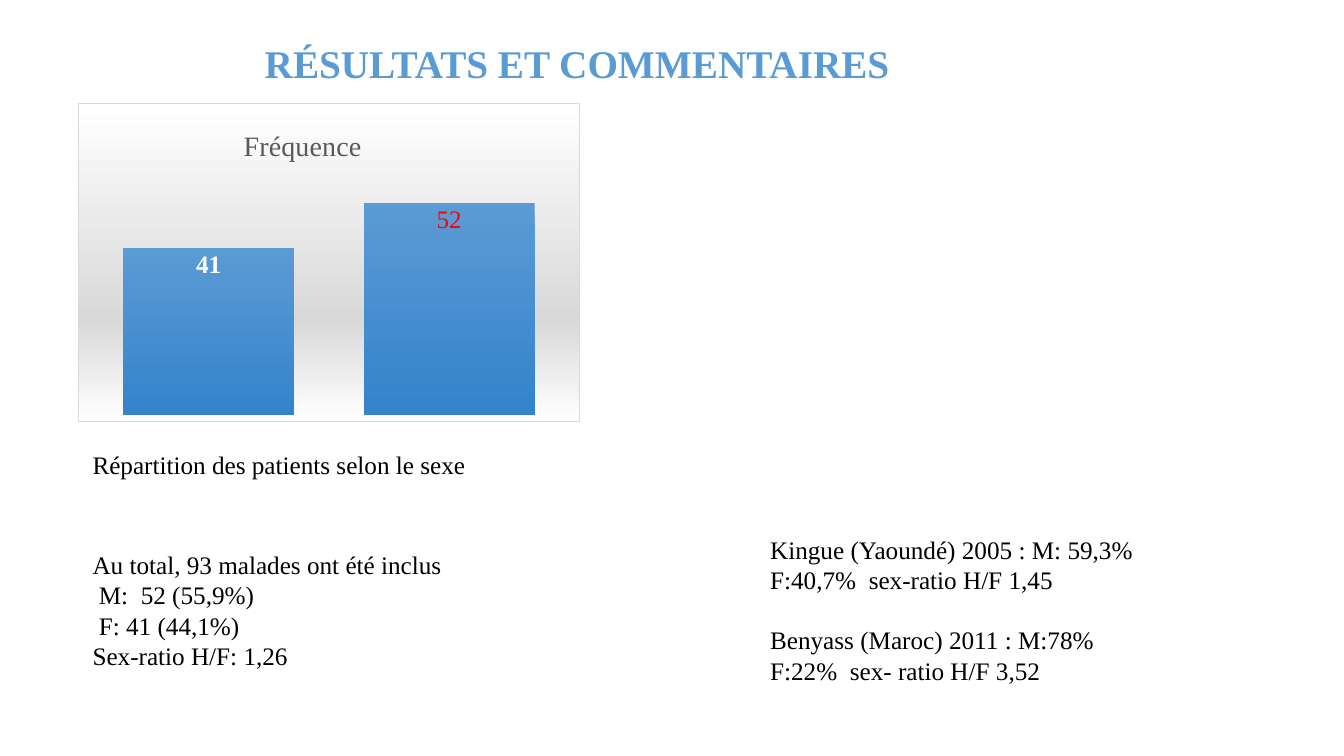
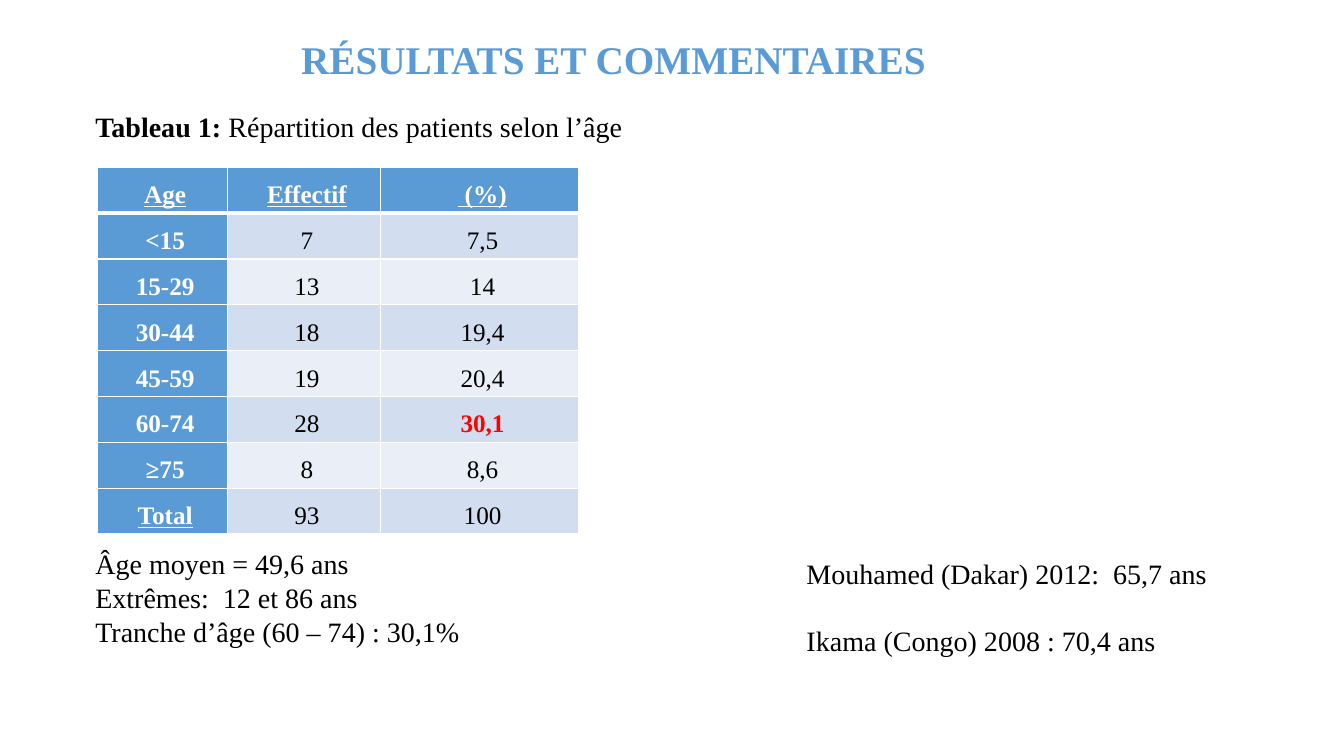
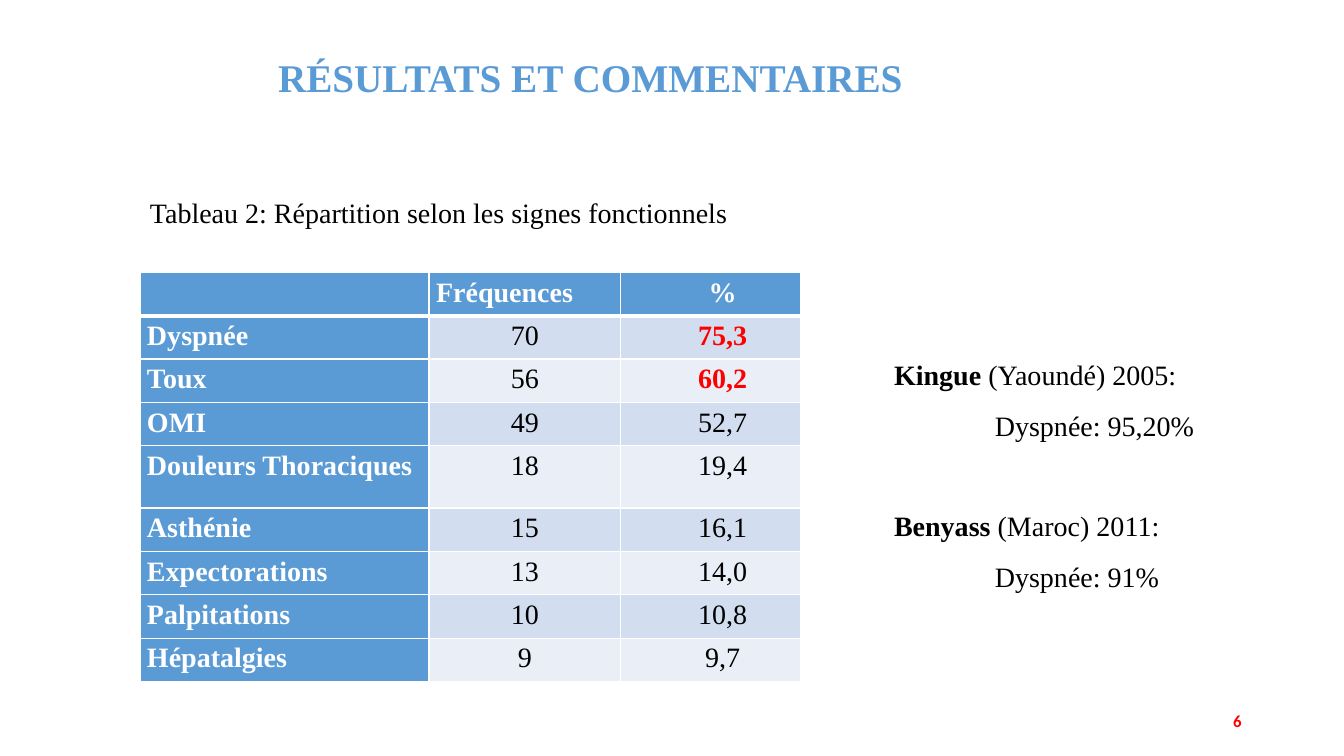
"""Build three result slides: a sex chart, an age table and a symptom table."""
from pptx import Presentation
from pptx.chart.data import CategoryChartData
from pptx.dml.color import RGBColor
from pptx.enum.chart import XL_CHART_TYPE, XL_LABEL_POSITION
from pptx.enum.text import MSO_ANCHOR, PP_ALIGN
from pptx.oxml import parse_xml
from pptx.util import Pt

COLUMN = XL_CHART_TYPE.COLUMN_CLUSTERED
IN_END = XL_LABEL_POSITION.INSIDE_END
MIDDLE = MSO_ANCHOR.MIDDLE
ALIGN = {"L": PP_ALIGN.LEFT, "C": PP_ALIGN.CENTER, "R": PP_ALIGN.RIGHT}
SERIF, SANS = "Times New Roman", "Calibri"
BLUE, DEEP, PALE, LIGHT = "5B9BD5", "3483CB", "D2DEEF", "EAEFF7"
WHITE, BLACK, RED, GREY, EDGE = "FFFFFF", "000000", "FF0000", "595959", "D9D9D9"
NS_A = 'xmlns:a="http://schemas.openxmlformats.org/drawingml/2006/main"'
NS_C = 'xmlns:c="http://schemas.openxmlformats.org/drawingml/2006/chart"'

TITLE = "RÉSULTATS ET COMMENTAIRES"
TITLES = [(182, 24.5), (208, 22), (191.5, 34.5)]

BOXES = [
    [
        ((59, 317.5, 300, 29), 18, ["Répartition des patients selon le sexe"], {}),
        ((59, 389, 300, 117), 18, [
            "Au total, 93 malades ont été inclus",
            {"runs": [("M:  52 (55,9%)", False)], "indent": 4.5},
            {"runs": [("F: 41 (44,1%)", False)], "indent": 4.5},
            "Sex-ratio H/F: 1,26"], {}),
        ((543, 378, 290, 138), 18, [
            "Kingue (Yaoundé) 2005 : M: 59,3% F:40,7%  sex-ratio H/F 1,45",
            {"runs": [("Benyass (Maroc) 2011 : M:78% F:22%  sex- ratio H/F 3,52", False)],
             "before": 21.5}], {}),
    ],
    [
        ((61, 75, 400, 31.5), 20, [
            {"runs": [("Tableau 1: ", True),
                      ("Répartition des patients selon l’âge", False)]}], {}),
        ((61, 387, 290, 104), 20, [
            "Âge moyen = 49,6 ans",
            "Extrêmes:  12 et 86 ans",
            "Tranche d’âge (60 – 74) : 30,1%"], {}),
        ((569, 394, 310, 80), 20, [
            "Mouhamed (Dakar) 2012:  65,7 ans",
            {"runs": [("Ikama (Congo) 2008 : 70,4 ans", False)], "before": 24}], {}),
    ],
    [
        ((100, 136, 428, 31.5), 20,
         ["Tableau 2: Répartition selon les signes fonctionnels"], {}),
        ((631.5, 240, 259, 189), 20, [
            {"runs": [("Kingue", True), (" (Yaoundé) 2005:", False)]},
            {"runs": [("Dyspnée: 95,20%", False)], "indent": 72},
            {"runs": [("Benyass", True), (" (Maroc) 2011:", False)], "before": 36},
            {"runs": [("Dyspnée: 91%", False)], "indent": 72}], {"line": 1.5}),
        ((678, 500.5, 216, 29), 12, ["6"],
         {"font": SANS, "color": RED, "bold": True, "align": "R", "anchor": MIDDLE}),
    ],
]

SEXES = {"name": "Fréquence", "values": [41, 52], "at": (55.5, 73.5, 359, 228)}

AGES = {
    "rows": [("Age", "Effectif", " (%)"), ("<15", "7", "7,5"), ("15-29", "13", "14"),
             ("30-44", "18", "19,4"), ("45-59", "19", "20,4"), ("60-74", "28", "30,1"),
             ("≥75", "8", "8,6"), ("Total", "93", "100")],
    "at": (69.5, 119.5), "cols": [93, 109.5, 141.5], "high": [32.75] * 8,
    "head": "CCC", "body": "CCC", "left": [4, 4, 4], "right": 0,
    "size": 18, "line": 1.5, "red": {"30,1"}, "under": {"Age", "Effectif", " (%)", "Total"},
}
SIGNS = {
    "rows": [("", "Fréquences", "%"), ("Dyspnée", "70", "75,3"), ("Toux", "56", "60,2"),
             ("OMI", "49", "52,7"), ("Douleurs Thoraciques", "18", "19,4"),
             ("Asthénie", "15", "16,1"), ("Expectorations", "13", "14,0"),
             ("Palpitations", "10", "10,8"), ("Hépatalgies", "9", "9,7")],
    "at": (100, 194.5), "cols": [206.5, 137, 128.5],
    "high": [31] * 4 + [44.5] + [31] * 4,
    "head": "LLC", "body": "LCC", "left": [5, 5, 22], "right": 5,
    "size": 20, "line": 1.15, "red": {"75,3", "60,2"}, "under": set(),
}


def rgb(code):
    return RGBColor.from_string(code)


def style(font, size, color=BLACK, bold=False, name=SERIF):
    font.name, font.size, font.bold = name, Pt(size), bold
    font.color.rgb = rgb(color)


def put(frame, paras, size, color=BLACK, bold=False, under=False,
        align="L", line=None, font=SERIF):
    for i, item in enumerate(paras):
        para = frame.add_paragraph() if i else frame.paragraphs[0]
        if isinstance(item, str):
            item = {"runs": [(item, bold)]}
        para.alignment = ALIGN[align]
        if line:
            para.line_spacing = line
        if "before" in item:
            para.space_before = Pt(item["before"])
        if "indent" in item:
            para._p.get_or_add_pPr().set("marL", str(Pt(item["indent"])))
        for words, heavy in item["runs"]:
            run = para.add_run()
            run.text = words
            style(run.font, size, color, heavy, font)
            if under:
                run.font.underline = True


def box(slide, at, paras, size, anchor=None, **form):
    frame = slide.shapes.add_textbox(*map(Pt, at)).text_frame
    frame.word_wrap = True
    if anchor is not None:
        frame.vertical_anchor = anchor
    put(frame, paras, size, **form)


def border(cell, head):
    props = cell._tc.get_or_add_tcPr()
    for side in "LRTB":
        wide = Pt(3 if head and side == "B" else 1)
        props.append(parse_xml(
            f'<a:ln{side} {NS_A} w="{wide}"><a:solidFill><a:srgbClr val="{WHITE}"/>'
            f'</a:solidFill></a:ln{side}>'))


def grid(slide, data):
    rows, cols, high = data["rows"], data["cols"], data["high"]
    spot = (*data["at"], sum(cols), sum(high))
    table = slide.shapes.add_table(len(rows), len(cols), *map(Pt, spot)).table
    for i, wide in enumerate(cols):
        table.columns[i].width = Pt(wide)
    for r, row in enumerate(rows):
        table.rows[r].height = Pt(high[r])
        for c, words in enumerate(row):
            cell = table.cell(r, c)
            label, hot = r == 0 or c == 0, words in data["red"]
            cell.margin_left, cell.margin_right = Pt(data["left"][c]), Pt(data["right"])
            cell.margin_top = cell.margin_bottom = 0
            border(cell, r == 0)
            cell.fill.solid()
            cell.fill.fore_color.rgb = rgb(BLUE if label else PALE if r % 2 else LIGHT)
            put(cell.text_frame, [words], data["size"],
                color=WHITE if label else RED if hot else BLACK,
                bold=label or hot, under=words in data["under"],
                align=data["body" if r else "head"][c], line=data["line"])


def fade(*stops):
    marks = "".join(f'<a:gs pos="{pos * 1000}"><a:srgbClr val="{code}"/></a:gs>'
                    for pos, code in stops)
    return (f'<a:gradFill {NS_A} rotWithShape="1"><a:gsLst>{marks}</a:gsLst>'
            f'<a:lin ang="5400000" scaled="0"/></a:gradFill>')


def layout(x, y, w=None, h=None):
    inner = '<c:layoutTarget val="inner"/>' if w else ""
    sizes = f'<c:w val="{w}"/><c:h val="{h}"/>' if w else ""
    return parse_xml(
        f'<c:layout {NS_C}><c:manualLayout>{inner}<c:xMode val="edge"/>'
        f'<c:yMode val="edge"/><c:x val="{x}"/><c:y val="{y}"/>{sizes}'
        f'</c:manualLayout></c:layout>')


def place(node, new):
    for old in node.findall(new.tag):
        node.remove(old)
    text = node.find(new.tag.replace("layout", "tx"))
    if text is None:
        node.insert(0, new)
    else:
        text.addnext(new)


def bars(slide, data):
    feed = CategoryChartData()
    feed.categories = ["1", "2"]
    feed.add_series("Series 1", data["values"])
    chart = slide.shapes.add_chart(COLUMN, *map(Pt, data["at"]), feed).chart
    style(chart.font, 10, name=SANS)
    chart.has_legend = False
    chart.has_title = True
    put(chart.chart_title.text_frame, [data["name"]], 20, color=GREY)
    chart.chart_title.include_in_layout = False
    place(chart.chart_title._element, layout(0.32, 0.06))
    axis = chart.value_axis
    axis.minimum_scale, axis.maximum_scale = 0, 60
    axis.has_major_gridlines = False
    axis.visible = chart.category_axis.visible = False

    plot = chart.plots[0]
    plot.gap_width, plot.vary_by_categories = 41, False
    series = plot.series[0]
    series._element.get_or_add_spPr().append(
        parse_xml(fade((0, BLUE), (100, DEEP))))
    labels = series.data_labels
    labels.show_value, labels.position = True, IN_END
    style(labels.font, 18, WHITE, True)
    last = series.points[1].data_label
    style(last.font, 18, RED)
    last.position = IN_END

    root = chart._chartSpace.chart
    place(root.plotArea, layout(0.02, 0.21, 0.96, 0.77))
    root.addnext(parse_xml(
        f'<c:spPr {NS_C} {NS_A}>{fade((0, WHITE), (68, EDGE), (100, WHITE))}'
        f'<a:ln w="{Pt(0.75)}"><a:solidFill><a:srgbClr val="{EDGE}"/></a:solidFill>'
        f'</a:ln></c:spPr>'))


def main():
    deck = Presentation()
    deck.slide_width, deck.slide_height = Pt(960), Pt(540)
    parts = [(bars, SEXES), (grid, AGES), (grid, SIGNS)]
    for (left, top), (draw, data), boxes in zip(TITLES, parts, BOXES):
        slide = deck.slides.add_slide(deck.slide_layouts[6])
        box(slide, (left, top, 470, 41), [TITLE], 28, color=BLUE, bold=True)
        draw(slide, data)
        for at, size, paras, form in boxes:
            box(slide, at, paras, size, **form)
    deck.save("out.pptx")


if __name__ == "__main__":
    main()
